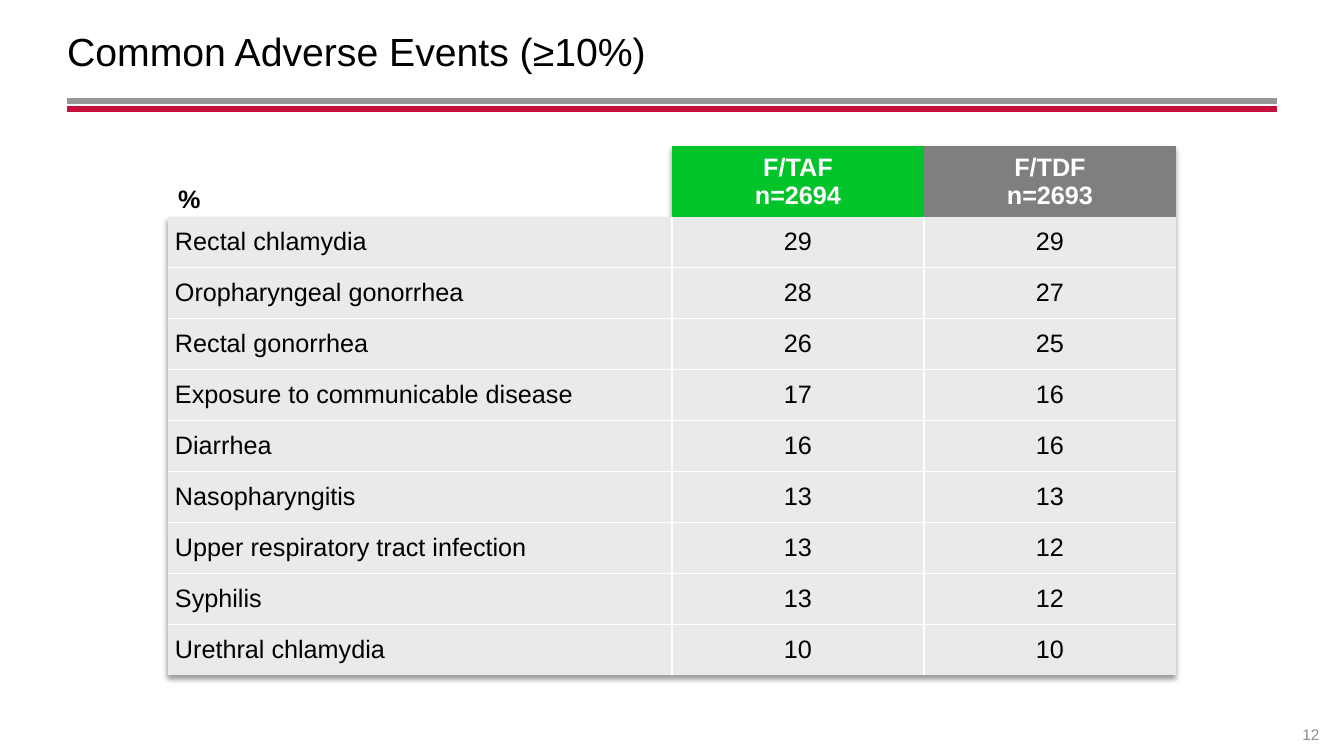
"""Build a slide with a table of common adverse events."""
import pptx
import pptx.dml.color
import pptx.enum.shapes
import pptx.enum.text
import pptx.oxml
import pptx.oxml.ns
import pptx.util

Pt = pptx.util.Pt
Align = pptx.enum.text.PP_ALIGN
Anchor = pptx.enum.text.MSO_ANCHOR
SPACE = pptx.oxml.ns.nsdecls("a")


def paint(color, text):
    color.rgb = pptx.dml.color.RGBColor.from_string(text)


def write(frame, lines, size, color, align=Align.LEFT, bold=False):
    for i, line in enumerate(lines):
        para = frame.paragraphs[0] if i == 0 else frame.add_paragraph()
        para.alignment = align
        run = para.add_run()
        run.text = line
        run.font.name = "Arial"
        run.font.size = Pt(size)
        run.font.bold = bold
        paint(run.font.color, color)


deck = pptx.Presentation()
deck.slide_width, deck.slide_height = Pt(960), Pt(540)
slide = deck.slides.add_slide(deck.slide_layouts[6])
shapes = slide.shapes

for y, color in [(72, "969696"), (78, "C50F3C")]:
    rule = shapes.add_connector(
        pptx.enum.shapes.MSO_CONNECTOR.STRAIGHT, Pt(48), Pt(y), Pt(912), Pt(y))
    rule.line.width = Pt(4.25)
    paint(rule.line.color, color)
    rule._element.spPr.append(pptx.oxml.parse_xml(f"<a:effectLst {SPACE}/>"))

labels = [
    ("Common Adverse Events (≥10%)", (48, 6.5, 864, 59), 0, Anchor.MIDDLE, 28, "000000", Align.LEFT),
    ("12", (921.6, 506, 29.5, 29), 7.2, Anchor.BOTTOM, 11, "8C8C8C", Align.CENTER),
]
for text, area, inset, anchor, size, color, align in labels:
    frame = shapes.add_textbox(*map(Pt, area)).text_frame
    frame.word_wrap = True
    frame.margin_left = frame.margin_right = Pt(inset)
    frame.vertical_anchor = anchor
    write(frame, [text], size, color, align)

events = [
    ("Rectal chlamydia", 29, 29),
    ("Oropharyngeal gonorrhea", 28, 27),
    ("Rectal gonorrhea", 26, 25),
    ("Exposure to communicable disease", 17, 16),
    ("Diarrhea", 16, 16),
    ("Nasopharyngitis", 13, 13),
    ("Upper respiratory tract infection", 13, 12),
    ("Syphilis", 13, 12),
    ("Urethral chlamydia", 10, 10),
]
rows = [("%", "F/TAF\nn=2694", "F/TDF\nn=2693")] + events
heads = [None, "00C42A", "7F7F7F"]
last = len(rows) - 1

table = shapes.add_table(len(rows), 3, Pt(120), Pt(104.4), Pt(720), Pt(378)).table
table.first_row = table.horz_banding = False
table._tbl.tblPr.insert(0, pptx.oxml.parse_xml(
    f'<a:effectLst {SPACE}><a:outerShdw blurRad="50800" dist="38100" dir="5400000" '
    'algn="t" rotWithShape="0"><a:srgbClr val="000000"><a:alpha val="40000"/>'
    '</a:srgbClr></a:outerShdw></a:effectLst>'))
for col, width in zip(table.columns, (360, 180, 180)):
    col.width = Pt(width)

for r, row in enumerate(rows):
    head = r == 0
    table.rows[r].height = Pt(50.4 if head else 36.4)
    for c, value in enumerate(row):
        cell = table.cell(r, c)
        cell.margin_left = cell.margin_right = Pt(7.2 if head else 5)
        cell.margin_top = cell.margin_bottom = Pt(2 if head else 0)
        cell.vertical_anchor = Anchor.BOTTOM if head and c == 0 else Anchor.MIDDLE
        edges = {"L": c > 0, "R": c < 2, "T": r > 1, "B": r < last}
        for side, shown in edges.items():
            fill = "<a:noFill/>"
            if shown and not head:
                fill = '<a:solidFill><a:srgbClr val="FFFFFF"/></a:solidFill>'
            cell._tc.get_or_add_tcPr().append(pptx.oxml.parse_xml(
                f'<a:ln{side} {SPACE} w="12700">{fill}</a:ln{side}>'))
        back = heads[c] if head else "EAEAEA"
        if back:
            cell.fill.solid()
            paint(cell.fill.fore_color, back)
        else:
            cell.fill.background()
        write(cell.text_frame, str(value).split("\n"), 18,
              "FFFFFF" if head and c else "000000",
              Align.CENTER if c else Align.LEFT, head)

deck.save("out.pptx")
